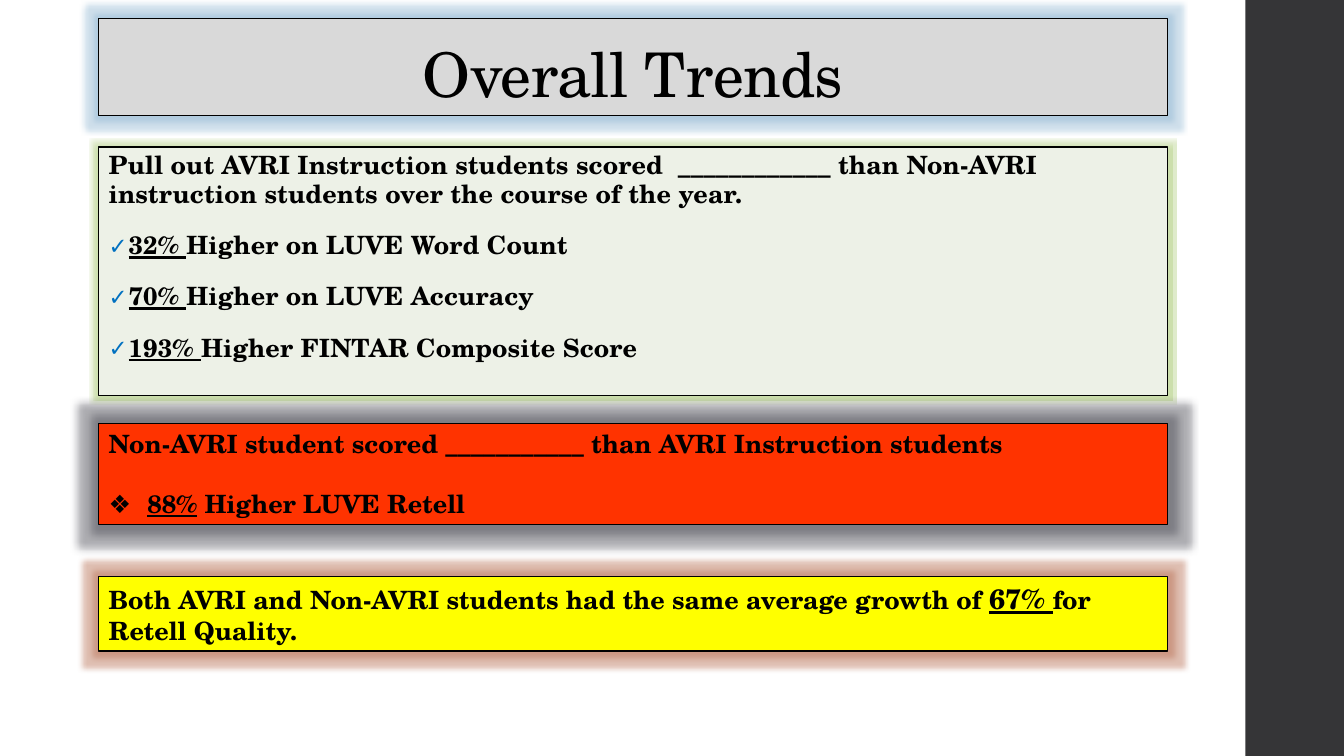
from dataclasses import dataclass

from lxml import etree
from pptx import Presentation
from pptx import util as u
from pptx.dml.color import RGBColor
from pptx.enum import shapes, text
from pptx.oxml import ns

EMU_PER_PX = 9525
FONT = "TeX Gyre Schola"
BLACK = RGBColor(0x00, 0x00, 0x00)
CHARCOAL = RGBColor(0x35, 0x35, 0x37)
GREY = RGBColor(0xD9, 0xD9, 0xD9)
PALE_GREEN = RGBColor(0xED, 0xF1, 0xE7)
RED = RGBColor(0xFF, 0x33, 0x00)
YELLOW = RGBColor(0xFF, 0xFF, 0x00)
TICK_BLUE = RGBColor(0x00, 0x70, 0xC0)
BLUE_GLOW = RGBColor(0x87, 0xB1, 0xCF)
GREEN_GLOW = RGBColor(0xB1, 0xCD, 0x7F)
DARK_GLOW = RGBColor(0x35, 0x35, 0x40)
BROWN_GLOW = RGBColor(0xB0, 0x5F, 0x40)

PANEL_LEFT, PANEL_WIDTH = 94, 1018


@dataclass(frozen=True)
class Span:
    words: str
    underline: bool = False
    size: float = 18
    bold: bool = True
    spacing: int = 0  # hundredths of a point


@dataclass(frozen=True)
class Bullet:
    mark: str
    indent: int
    color: RGBColor | None = None
    percent: int = 100


@dataclass(frozen=True)
class Para:
    spans: list[Span]
    bullet: Bullet | None = None
    align: text.PP_ALIGN = text.PP_ALIGN.LEFT
    line: float = 1.0
    before: float = 0
    after: float = 0


@dataclass(frozen=True)
class Panel:
    top: int
    height: int
    fill: RGBColor
    glow: RGBColor
    glow_points: int
    paras: list[Para]
    anchor: text.MSO_ANCHOR = text.MSO_ANCHOR.TOP
    grow: bool = False


TICK = Bullet("✓", 19, TICK_BLUE, 90)
DIAMOND = Bullet("❖", 30)


def finding(spans: list[Span], bullet: Bullet | None = None) -> Para:
    return Para(spans, bullet, line=0.95, before=14, after=2)


def score(percent: str, measure: str) -> Para:
    return finding([Span(percent, True, spacing=10), Span(measure, spacing=10)], TICK)


PANELS = [
    Panel(18, 92, GREY, BLUE_GLOW, 7, [
        Para([Span("Overall Trends", size=44, bold=False, spacing=-50)],
             align=text.PP_ALIGN.CENTER, line=0.9),
    ], anchor=text.MSO_ANCHOR.BOTTOM),
    Panel(140, 237, PALE_GREEN, GREEN_GLOW, 3, [
        finding([Span("Pull out AVRI Instruction students scored  ____________ than Non-AVRI "
                      "instruction students over the course of the year.", spacing=10)]),
        score("32% ", "Higher on LUVE Word Count"),
        score("70% ", "Higher on LUVE Accuracy"),
        score("193% ", "Higher FINTAR Composite Score"),
    ]),
    Panel(403, 97, RED, DARK_GLOW, 11, [
        Para([Span("Non-AVRI student scored ___________ than AVRI Instruction students")]),
        Para([Span(" "), Span("88%", True), Span(" Higher LUVE Retell")], DIAMOND, before=21.5),
    ], grow=True),
    Panel(549, 71, YELLOW, BROWN_GLOW, 8, [
        Para([Span("Both AVRI and Non-AVRI students had the same average growth of "),
              Span("67% ", True, 20), Span("for Retell Quality.")]),
    ], grow=True),
]


def px(length: int) -> u.Emu:
    return u.Emu(length * EMU_PER_PX)


def add_child(parent, tag: str, **attributes: str):
    child = etree.SubElement(parent, ns.qn(tag))
    for name, value in attributes.items():
        child.set(name, value)
    return child


def add_box(page, left: int, top: int, width: int, height: int, fill: RGBColor):
    box = page.shapes.add_shape(shapes.MSO_SHAPE.RECTANGLE,
                                px(left), px(top), px(width), px(height))
    box.shadow.inherit = False
    box.fill.solid()
    box.fill.fore_color.rgb = fill
    box.line.fill.background()
    return box


def add_glow(box, color: RGBColor, points: int) -> None:
    effects = box.element.spPr.find(ns.qn("a:effectLst"))
    glow = add_child(effects, "a:glow", rad=str(u.Pt(points)))
    tint = add_child(glow, "a:srgbClr", val=str(color))
    add_child(tint, "a:alpha", val="40000")


def set_bullet(para, bullet: Bullet) -> None:
    properties = para._p.get_or_add_pPr()
    properties.set("marL", str(px(bullet.indent)))
    properties.set("indent", str(-px(bullet.indent)))
    if bullet.color is not None:
        tint = add_child(properties, "a:buClr")
        add_child(tint, "a:srgbClr", val=str(bullet.color))
    add_child(properties, "a:buSzPct", val=str(bullet.percent * 1000))
    add_child(properties, "a:buFont", typeface=FONT)
    add_child(properties, "a:buChar", char=bullet.mark)


def write_para(para, content: Para) -> None:
    para.alignment = content.align
    para.line_spacing = content.line
    para.space_before = u.Pt(content.before)
    para.space_after = u.Pt(content.after)
    if content.bullet:
        set_bullet(para, content.bullet)
    for part in content.spans:
        span = para.add_run()
        span.text = part.words
        span.font.name = FONT
        span.font.size = u.Pt(part.size)
        span.font.bold = part.bold
        span.font.underline = part.underline
        span.font.color.rgb = BLACK
        if part.spacing:
            span.font._element.set("spc", str(part.spacing))


def draw_panel(page, panel: Panel) -> None:
    box = add_box(page, PANEL_LEFT, panel.top, PANEL_WIDTH, panel.height, panel.fill)
    box.line.color.rgb = BLACK
    box.line.width = u.Pt(0.75)
    add_glow(box, panel.glow, panel.glow_points)
    frame = box.text_frame
    frame.word_wrap = True
    frame.vertical_anchor = panel.anchor
    if panel.grow:
        frame.auto_size = text.MSO_AUTO_SIZE.SHAPE_TO_FIT_TEXT
    for index, content in enumerate(panel.paras):
        write_para(frame.add_paragraph() if index else frame.paragraphs[0], content)


def main() -> None:
    deck = Presentation()
    deck.slide_width, deck.slide_height = px(1280), px(720)
    page = deck.slides.add_slide(deck.slide_layouts[6])
    add_box(page, 1186, 0, 94, 720, CHARCOAL)
    for panel in PANELS:
        draw_panel(page, panel)
    deck.save("out.pptx")


if __name__ == "__main__":
    main()
